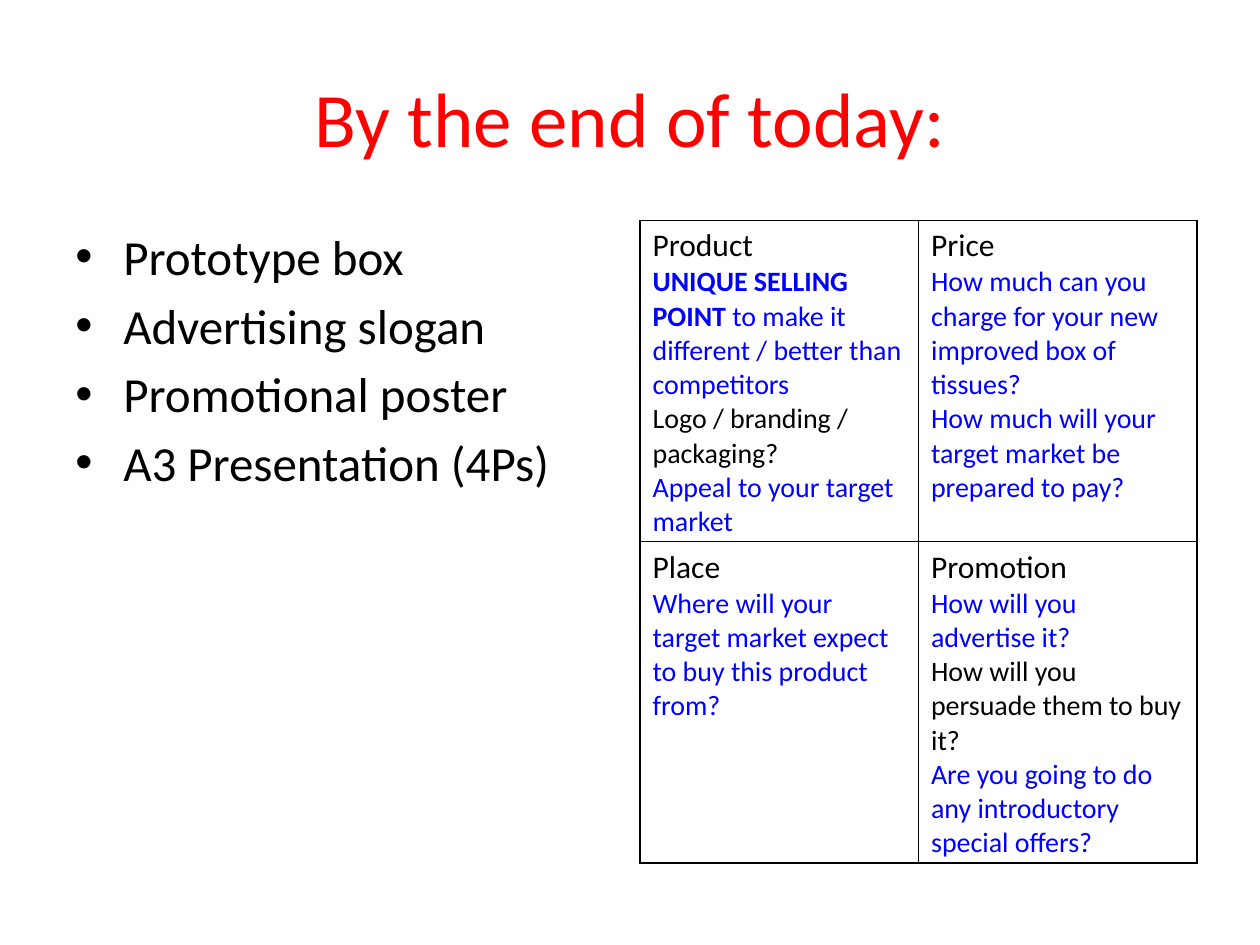
from dataclasses import dataclass

from lxml.etree import SubElement
from pptx import Presentation
from pptx.dml.color import RGBColor
from pptx.enum.text import MSO_ANCHOR as Anchor, PP_ALIGN as Align
from pptx.oxml.ns import qn
from pptx.util import Inches, Pt

RED = RGBColor(0xFF, 0x00, 0x00)
BLUE = RGBColor(0x00, 0x00, 0xFF)
BLACK = RGBColor(0x00, 0x00, 0x00)
FONT = "Calibri"
WIDTH, HEIGHT = Inches(10), Inches(7.5)


@dataclass(frozen=True)
class Span:
    text: str
    color: RGBColor = BLUE
    size: float = 16
    bold: bool = False


@dataclass(frozen=True)
class Area:
    left: float
    top: float
    width: float
    height: float

    def box(self) -> tuple[int, ...]:
        """Turn shares of the slide into lengths."""
        pairs = zip((self.left, self.top, self.width, self.height), (WIDTH, HEIGHT) * 2)
        return tuple(round(share * side) for share, side in pairs)


TITLE = Area(0.05, 0.04, 0.9, 1 / 6)
BODY = Area(0.05, 0.2333, 0.442, 0.66)
GRID = Area(0.508, 0.2333, 0.442, 0.68)

TASKS = ["Prototype box", "Advertising slogan", "Promotional poster", "A3 Presentation (4Ps)"]
MARKETING_MIX = [
    [
        ("Product", [
            [Span("UNIQUE SELLING POINT", bold=True),
             Span(" to make it different / better than competitors")],
            [Span("Logo / branding / packaging?", BLACK)],
            [Span("Appeal to your target market")],
        ]),
        ("Price", [
            [Span("How much can you charge for your new improved box of tissues?")],
            [Span("How much will your target market be prepared to pay?")],
        ]),
    ],
    [
        ("Place", [
            [Span("Where will your target market expect to buy this product from?")],
        ]),
        ("Promotion", [
            [Span("How will you advertise it?")],
            [Span("How will you persuade them to buy it?", BLACK)],
            [Span("Are you going to do any introductory special offers?")],
        ]),
    ],
]


def write(tf, lines: list[list[Span]], **formats) -> None:
    """Fill a text frame with one paragraph per line of spans."""
    for i, line in enumerate(lines):
        p = tf.add_paragraph() if i else tf.paragraphs[0]
        for name, value in formats.items():
            setattr(p, name, value)
        for span in line:
            r = p.add_run()
            r.text = span.text
            font = {"name": FONT, "size": Pt(span.size), "bold": span.bold}
            for name, value in font.items():
                setattr(r.font, name, value)
            r.font.color.rgb = span.color


def add_text(s, area: Area, lines: list[list[Span]], anchor: Anchor, **formats):
    """Add a wrapping text box and return its frame."""
    tf = s.shapes.add_textbox(*area.box()).text_frame
    tf.word_wrap = True
    tf.vertical_anchor = anchor
    write(tf, lines, **formats)
    return tf


def add_bullet(p, indent: int) -> None:
    """Give a paragraph a hanging bullet."""
    pPr = p._p.get_or_add_pPr()
    pPr.set("marL", str(indent))
    pPr.set("indent", str(-indent))
    SubElement(pPr, qn("a:buFont"), typeface="Arial")
    SubElement(pPr, qn("a:buChar"), char="•")


def add_borders(cell) -> None:
    """Draw a thin black line on each side of a cell."""
    tcPr = cell._tc.get_or_add_tcPr()
    for i, side in enumerate(("a:lnL", "a:lnR", "a:lnT", "a:lnB")):
        ln = tcPr.makeelement(qn(side), {"w": str(Pt(1))})
        SubElement(SubElement(ln, qn("a:solidFill")), qn("a:srgbClr"), val=str(BLACK))
        tcPr.insert(i, ln)


def add_grid(s, area: Area, rows: list) -> None:
    """Add the bordered table of headed cells."""
    table = s.shapes.add_table(len(rows), len(rows[0]), *area.box()).table
    for name in ("first_row", "horz_banding"):
        setattr(table, name, False)
    for i, row in enumerate(rows):
        for j, (heading, lines) in enumerate(row):
            cell = table.cell(i, j)
            cell.fill.background()
            add_borders(cell)
            write(cell.text_frame, [[Span(heading, BLACK, 18)], *lines])


def main() -> None:
    """Build and save the slide."""
    prs = Presentation()
    prs.slide_width, prs.slide_height = WIDTH, HEIGHT
    s = prs.slides.add_slide(prs.slide_layouts[6])
    add_text(s, TITLE, [[Span("By the end of today:", RED, 44)]], Anchor.MIDDLE,
             alignment=Align.CENTER)
    tf = add_text(s, BODY, [[Span(task, BLACK, 28)] for task in TASKS], Anchor.TOP,
                  space_before=Pt(5.6))
    for p in tf.paragraphs:
        add_bullet(p, Inches(0.38))
    add_grid(s, GRID, MARKETING_MIX)
    prs.save("out.pptx")


if __name__ == "__main__":
    main()
